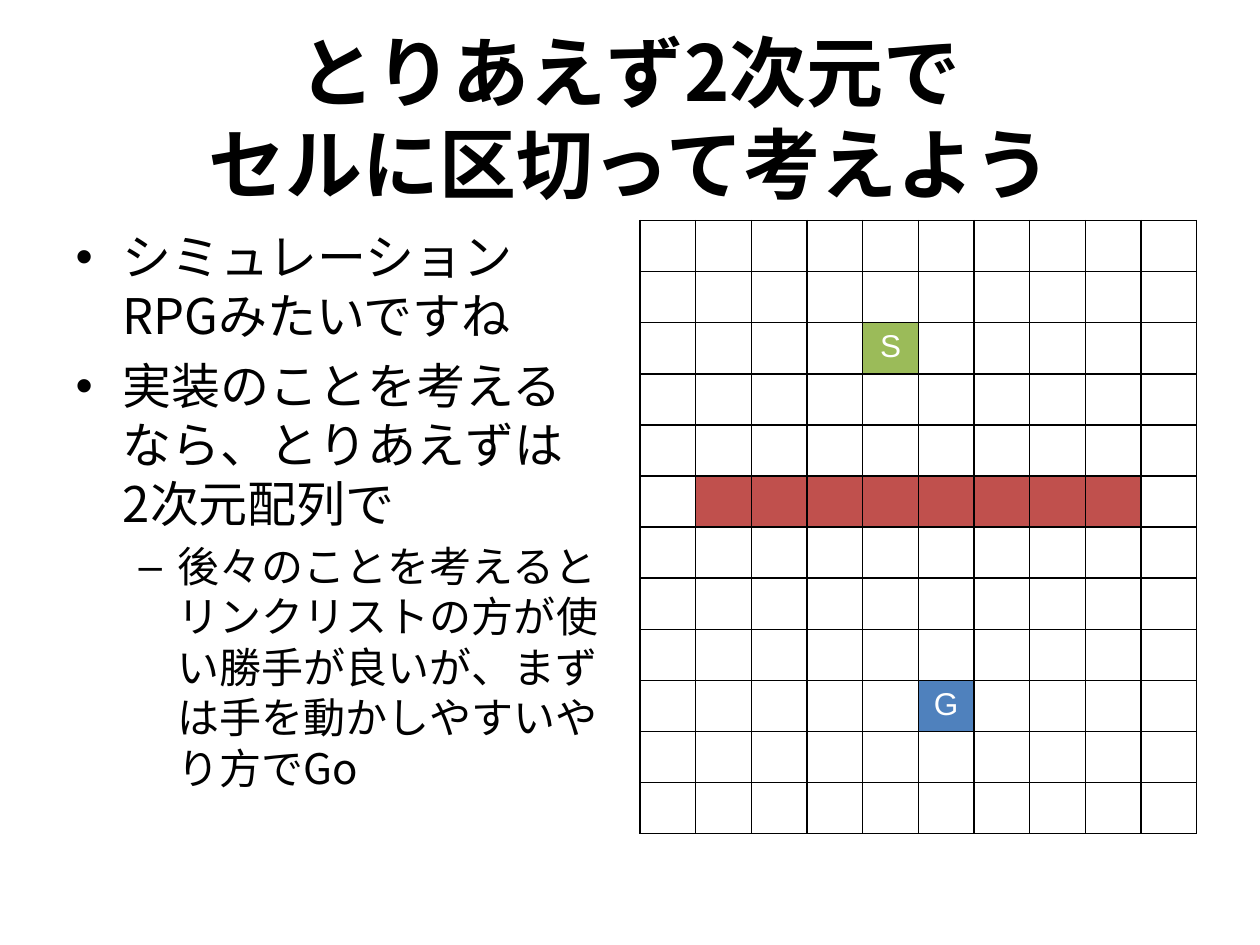
from lxml import etree
from pptx import Presentation, util as u
from pptx.dml.color import RGBColor
from pptx.enum import text
from pptx.oxml.ns import qn

BLACK = RGBColor(0x00, 0x00, 0x00)
WHITE = RGBColor(0xFF, 0xFF, 0xFF)
GREEN = RGBColor(0x9B, 0xBB, 0x59)
RED = RGBColor(0xC0, 0x50, 0x4D)
BLUE = RGBColor(0x4F, 0x81, 0xBD)
JAPANESE, LATIN = "Noto Sans CJK JP", "Arial"

# Content
TITLE = [(0, "とりあえず2次元で\nセルに区切って考えよう")]
POINTS = [
    (0, "シミュレーションRPGみたいですね"),
    (0, "実装のことを考えるなら、とりあえずは\n2次元配列で"),
    (1, "後々のことを考えるとリンクリストの方が使い勝手が良いが、まずは手を動かしやすいやり方でGo"),
]
POINT_SIZES = [28, 24]
MAP = [
    "..........",
    "..........",
    "....S.....",
    "..........",
    "..........",
    ".########.",
    "..........",
    "..........",
    "..........",
    ".....G....",
    "..........",
    "..........",
]
FILLS = {"S": GREEN, "G": BLUE, "#": RED}

# Layout: two equal columns inside the margins
WIDTH, HEIGHT, MARGIN, GAP = 10, 7.5, 0.5, 0.16
COLUMN = (WIDTH - 2 * MARGIN - GAP) / 2
TOP = 1.75
MAP_HEIGHT = 4.87


def place(shape, *frame):
    for name, value in zip(("left", "top", "width", "height"), frame):
        setattr(shape, name, u.Inches(value))


def style(span, **values):
    for name, value in values.items():
        setattr(span.font, name, value)


def write(holder, lines, sizes, **values):
    frame = holder.text_frame
    frame.auto_size = text.MSO_AUTO_SIZE.NONE
    for index, (level, line) in enumerate(lines):
        para = frame.add_paragraph() if index else frame.paragraphs[0]
        para.text, para.level = line, level
        for span in para.runs:
            style(span, name=JAPANESE, size=u.Pt(sizes[level]), **values)
            span.font.color.rgb = BLACK
            east_asian = etree.SubElement(span.font._element, qn("a:ea"))
            east_asian.set("typeface", JAPANESE)


def outline(cell):
    properties = cell._tc.get_or_add_tcPr()
    for index, side in enumerate(("lnL", "lnR", "lnT", "lnB")):
        line = etree.Element(qn(f"a:{side}"), w=str(u.Pt(1)))
        fill = etree.SubElement(line, qn("a:solidFill"))
        etree.SubElement(fill, qn("a:srgbClr"), val=str(BLACK))
        properties.insert(index, line)


def add_map(page):
    rows, columns = len(MAP), len(MAP[0])
    frame = page.shapes.add_table(
        rows, columns, u.Inches(MARGIN + COLUMN + GAP), u.Inches(TOP),
        u.Inches(COLUMN), u.Inches(MAP_HEIGHT))
    table = frame.table
    table.first_row = table.horz_banding = False
    for r, row in enumerate(MAP):
        for c, mark in enumerate(row):
            cell = table.cell(r, c)
            if mark in FILLS:
                cell.fill.solid()
                cell.fill.fore_color.rgb = FILLS[mark]
            else:
                cell.fill.background()
            outline(cell)
            if mark.isalpha():
                para = cell.text_frame.paragraphs[0]
                para.alignment = text.PP_ALIGN.CENTER
                span = para.add_run()
                span.text = mark
                style(span, name=LATIN, size=u.Pt(18))
                span.font.color.rgb = WHITE


def main():
    deck = Presentation()
    deck.slide_width, deck.slide_height = u.Inches(WIDTH), u.Inches(HEIGHT)
    page = deck.slides.add_slide(deck.slide_layouts[1])

    # Title and bullet list
    title, body = page.placeholders
    place(title, MARGIN, 0.3, WIDTH - 2 * MARGIN, 1.25)
    write(title, TITLE, [44], bold=True)
    place(body, MARGIN, TOP, COLUMN, 4.95)
    write(body, POINTS, POINT_SIZES)

    # Cell map with start, wall and goal
    add_map(page)
    deck.save("out.pptx")


if __name__ == "__main__":
    main()
